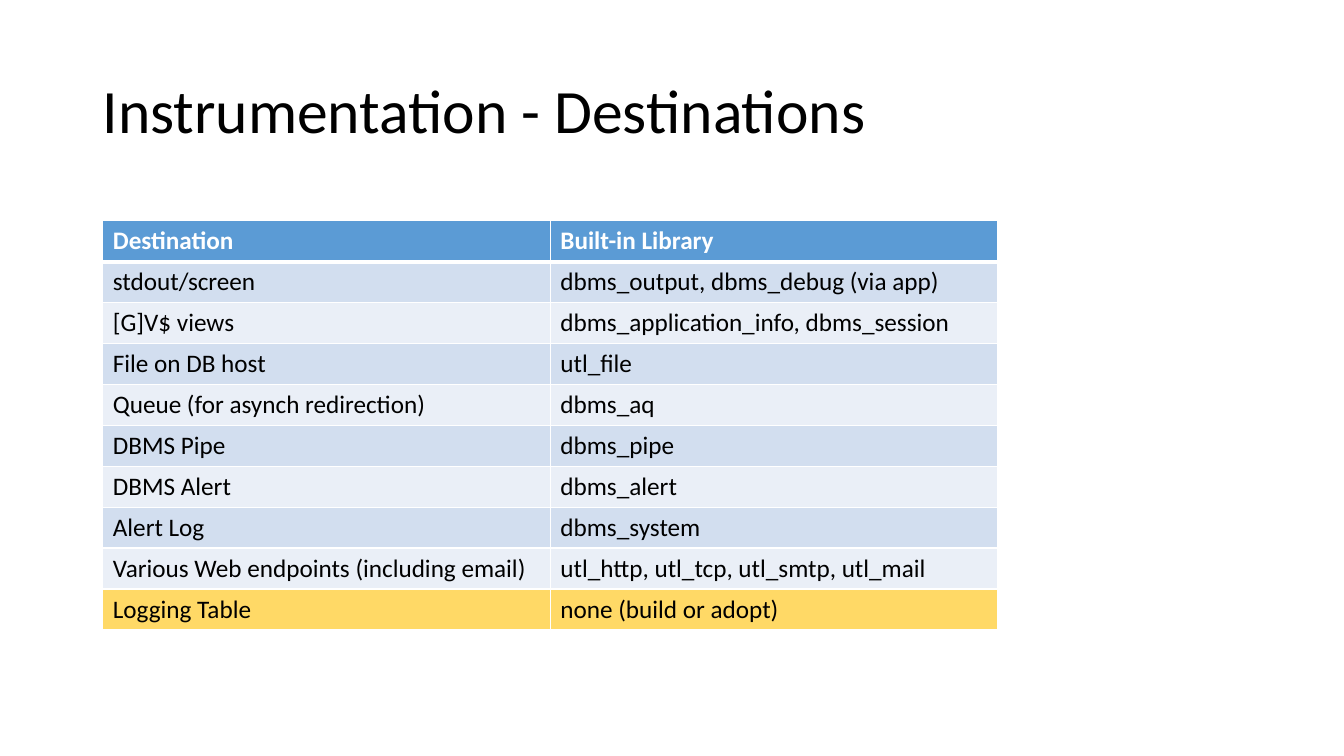
"""Build the slide listing instrumentation destinations and their libraries."""
from lxml.etree import SubElement
from pptx import Presentation
from pptx.dml.color import RGBColor as Rgb
from pptx.enum.text import MSO_ANCHOR as Anchor
from pptx.oxml.ns import qn
from pptx.util import Inches, Pt

COLOURS = {
    "header": "5B9BD5",
    "odd": "D2DEEF",
    "even": "EAEFF7",
    "highlight": "FFD966",
    "light": "FFFFFF",
    "dark": "000000",
}
DESTINATIONS = [
    ("Destination", "Built-in Library"),
    ("stdout/screen", "dbms_output, dbms_debug (via app)"),
    ("[G]V$ views", "dbms_application_info, dbms_session"),
    ("File on DB host", "utl_file"),
    ("Queue (for asynch redirection)", "dbms_aq"),
    ("DBMS Pipe", "dbms_pipe"),
    ("DBMS Alert", "dbms_alert"),
    ("Alert Log", "dbms_system"),
    ("Various Web endpoints (including email)", "utl_http, utl_tcp, utl_smtp, utl_mail"),
    ("Logging Table", "none (build or adopt)"),
]
COLUMN_WIDTH = Inches(4.44)
ROW_HEIGHT = Inches(0.406)


def write(frame, words, colour, **formats):
    para = frame.paragraphs[0]
    span = para.add_run()
    span.text = words
    span.font.color.rgb = Rgb.from_string(COLOURS[colour])
    for name, value in {"name": "Calibri", **formats}.items():
        setattr(span.font, name, value)
    return para


def add_border(cell, side, width):
    line = SubElement(cell._tc.get_or_add_tcPr(), qn(f"a:ln{side}"), w=str(Pt(width)))
    fill = SubElement(line, qn("a:solidFill"))
    SubElement(fill, qn("a:srgbClr"), val=COLOURS["light"])


deck = Presentation()
deck.slide_width, deck.slide_height = Inches(13.333), Inches(7.5)
page = deck.slides.add_slide(deck.slide_layouts[6])

title_box = page.shapes.add_textbox(Inches(0.92), Inches(0.4), Inches(11.5), Inches(1.45))
title_box.text_frame.word_wrap = True
title_box.text_frame.vertical_anchor = Anchor.MIDDLE
title = write(title_box.text_frame, "Instrumentation - Destinations", "dark", size=Pt(44))
title.line_spacing = 0.9

row_count, column_count = len(DESTINATIONS), len(DESTINATIONS[0])
table = page.shapes.add_table(
    row_count, column_count, Inches(1.02), Inches(2.19),
    column_count * COLUMN_WIDTH, row_count * ROW_HEIGHT,
).table
for column in table.columns:
    column.width = COLUMN_WIDTH

row_fills = ["header"] + [("even", "odd")[row % 2] for row in range(1, row_count - 1)] + ["highlight"]
for row, (entries, row_fill) in enumerate(zip(DESTINATIONS, row_fills)):
    table.rows[row].height = ROW_HEIGHT
    is_header = row == 0
    for column, words in enumerate(entries):
        cell = table.cell(row, column)
        borders = {"L": 1, "R": 1, "T": 3 if row == 1 else 1, "B": 3 if is_header else 1}
        for side, width in borders.items():
            add_border(cell, side, width)
        cell.fill.solid()
        cell.fill.fore_color.rgb = Rgb.from_string(COLOURS[row_fill])
        write(cell.text_frame, words, "light" if is_header else "dark", size=Pt(18), bold=is_header)

deck.save("out.pptx")
